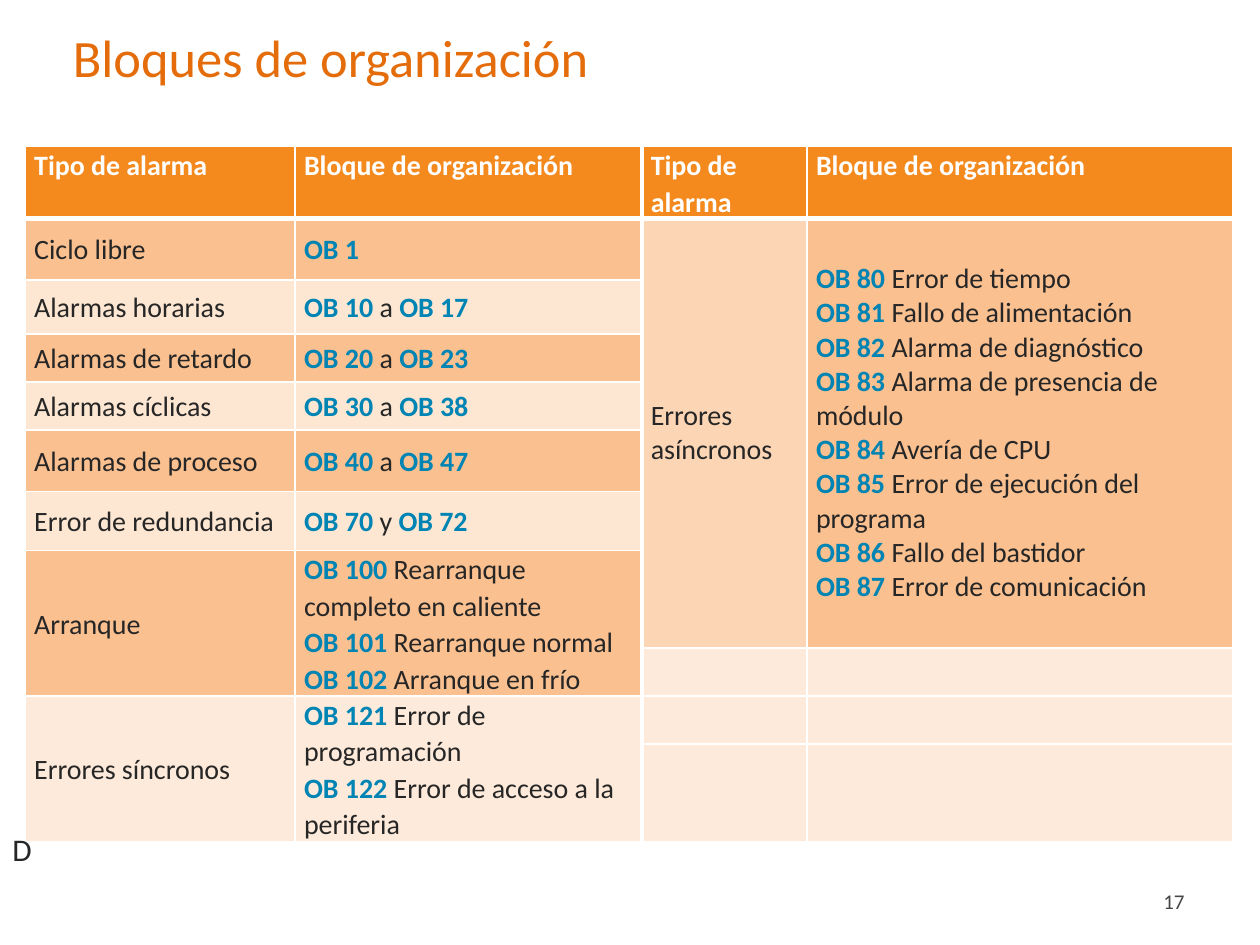
from dataclasses import dataclass

from lxml.etree import SubElement
from pptx import Presentation
from pptx.dml.color import RGBColor
from pptx.enum.text import MSO_ANCHOR as Anchor, PP_ALIGN as Align
from pptx.oxml.ns import qn
from pptx.util import Cm, Pt

FONT = "Calibri"
WHITE, DARK, TEAL = "FFFFFF", "262626", "0084B4"
HEAD, DEEP, MID, PALE, SOFT = "F4891E", "FAC090", "FCD5B5", "FDE7D2", "FDEADA"
COLS = [5.44, 6.99, 3.33, 8.59]
ROWS = [1.45, 1.24, 1.09, 0.97, 0.97, 1.24, 1.19, 1.96, 0.97, 0.97, 1.96]


@dataclass
class Entry:
    """A table cell; parts of a line between asterisks are block names."""
    row: int
    col: int
    lines: list[str]
    fill: str
    span: int = 1
    gap: float | None = 1.07


@dataclass
class Label:
    text: str
    left: float
    top: float
    width: float
    height: float
    size: int
    color: str
    align: Align = Align.LEFT
    anchor: Anchor = Anchor.MIDDLE
    wrap: bool = True


HEADS = ["Tipo de alarma", "Bloque de organización"] * 2
ALARMS = [
    ("Ciclo libre", "*OB 1*"),
    ("Alarmas horarias", "*OB 10 *a *OB 17*"),
    ("Alarmas de retardo", "*OB 20 *a *OB 23*"),
    ("Alarmas cíclicas", "*OB 30 *a *OB 38*"),
    ("Alarmas de proceso", "*OB 40 *a *OB 47*"),
    ("Error de redundancia", "*OB 70 *y *OB 72*"),
]
STARTS = ["*OB 100 *Rearranque completo en caliente",
          "*OB 101 *Rearranque normal", "*OB 102 *Arranque en frío"]
SYNC = ["*OB 121 *Error de programación", "*OB 122 *Error de acceso a la periferia"]
FAULTS = ["Error de tiempo", "Fallo de alimentación", "Alarma de diagnóstico",
          "Alarma de presencia de módulo", "Avería de CPU",
          "Error de ejecución del programa", "Fallo del bastidor",
          "Error de comunicación"]
LABELS = [
    Label("Bloques de organización", 1.22, 0.2, 23.34, 1.9, 30, "E46C0A"),
    Label("17", 18.21, 17.65, 5.92, 1.02, 12, "474747", Align.RIGHT),
    Label("D", 0, 16.61, 0.86, 1.02, 18, DARK, anchor=Anchor.TOP, wrap=False),
]


def rgb(code: str) -> RGBColor:
    return RGBColor.from_string(code)


def style(font, size: int, color: str, bold: bool = False) -> None:
    font.name, font.size, font.bold = FONT, Pt(size), bold
    font.color.rgb = rgb(color)


def add_label(slide, label: Label) -> None:
    box = slide.shapes.add_textbox(Cm(label.left), Cm(label.top),
                                   Cm(label.width), Cm(label.height))
    frame = box.text_frame
    frame.word_wrap = label.wrap
    frame.vertical_anchor = label.anchor
    frame.text = label.text
    para = frame.paragraphs[0]
    para.alignment = label.align
    style(para.runs[0].font, label.size, label.color)


def add_edges(cell, row: int, col: int) -> None:
    """Rule the cell in white, thick under the header and at the middle."""
    thick = {"lnL": col == 2, "lnR": col == 1, "lnT": row == 1, "lnB": row == 0}
    props = cell._tc.get_or_add_tcPr()
    for spot, (tag, wide) in enumerate(thick.items()):
        edge = SubElement(props, qn(f"a:{tag}"), w=str(Pt(3 if wide else 1)))
        paint = SubElement(edge, qn("a:solidFill"))
        SubElement(paint, qn("a:srgbClr"), val=WHITE)
        props.insert(spot, edge)


def fill_cell(table, entry: Entry) -> None:
    cell = table.cell(entry.row, entry.col)
    if entry.span > 1:
        cell.merge(table.cell(entry.row + entry.span - 1, entry.col))
    cell.fill.solid()
    cell.fill.fore_color.rgb = rgb(entry.fill)
    head = entry.row == 0
    cell.vertical_anchor = Anchor.TOP if head else Anchor.MIDDLE
    frame = cell.text_frame
    frame.text = "\n".join(" " if "*" in line else line for line in entry.lines)
    for para, line in zip(frame.paragraphs, entry.lines):
        para.line_spacing = entry.gap
        para.font.size = Pt(16)
        para.clear()
        for i, part in enumerate(line.split("*")):
            if part:
                run = para.add_run()
                run.text = part
                block = i % 2 == 1
                color = WHITE if head else TEAL if block else DARK
                style(run.font, 16, color, head or block)


def list_cells() -> list[Entry]:
    cells = [Entry(0, col, [text], HEAD) for col, text in enumerate(HEADS)]
    for row, pair in enumerate(ALARMS, 1):
        tint = DEEP if row % 2 else PALE
        cells += [Entry(row, col, [text], tint) for col, text in enumerate(pair)]
    faults = [f"*OB {num} *{text}" for num, text in enumerate(FAULTS, 80)]
    cells += [
        Entry(7, 0, ["Arranque"], DEEP, 2),
        Entry(7, 1, STARTS, DEEP, 2),
        Entry(9, 0, ["Errores síncronos"], SOFT, 2),
        Entry(9, 1, SYNC, SOFT, 2),
        Entry(1, 2, ["Errores asíncronos"], MID, 7, None),
        Entry(1, 3, faults, DEEP, 7, None),
    ]
    return cells + [Entry(row, col, [""], SOFT) for row in (8, 9, 10) for col in (2, 3)]


def add_grid(slide) -> None:
    table = slide.shapes.add_table(len(ROWS), len(COLS), Cm(0.51), Cm(2.95),
                                   Cm(sum(COLS)), Cm(sum(ROWS))).table
    table.first_row = table.horz_banding = False
    for col, width in zip(table.columns, COLS):
        col.width = Cm(width)
    for row, height in zip(table.rows, ROWS):
        row.height = Cm(height)
    for r in range(len(ROWS)):
        for c in range(len(COLS)):
            cell = table.cell(r, c)
            cell.margin_left = cell.margin_right = Cm(0.18)
            cell.margin_top = cell.margin_bottom = 0
            add_edges(cell, r, c)
    for entry in list_cells():
        fill_cell(table, entry)


def main() -> None:
    deck = Presentation()
    deck.slide_width, deck.slide_height = Cm(25.4), Cm(19.05)
    slide = deck.slides.add_slide(deck.slide_layouts[6])
    title, number, letter = LABELS
    add_label(slide, title)
    add_label(slide, number)
    add_grid(slide)
    add_label(slide, letter)
    deck.save("out.pptx")


if __name__ == "__main__":
    main()
